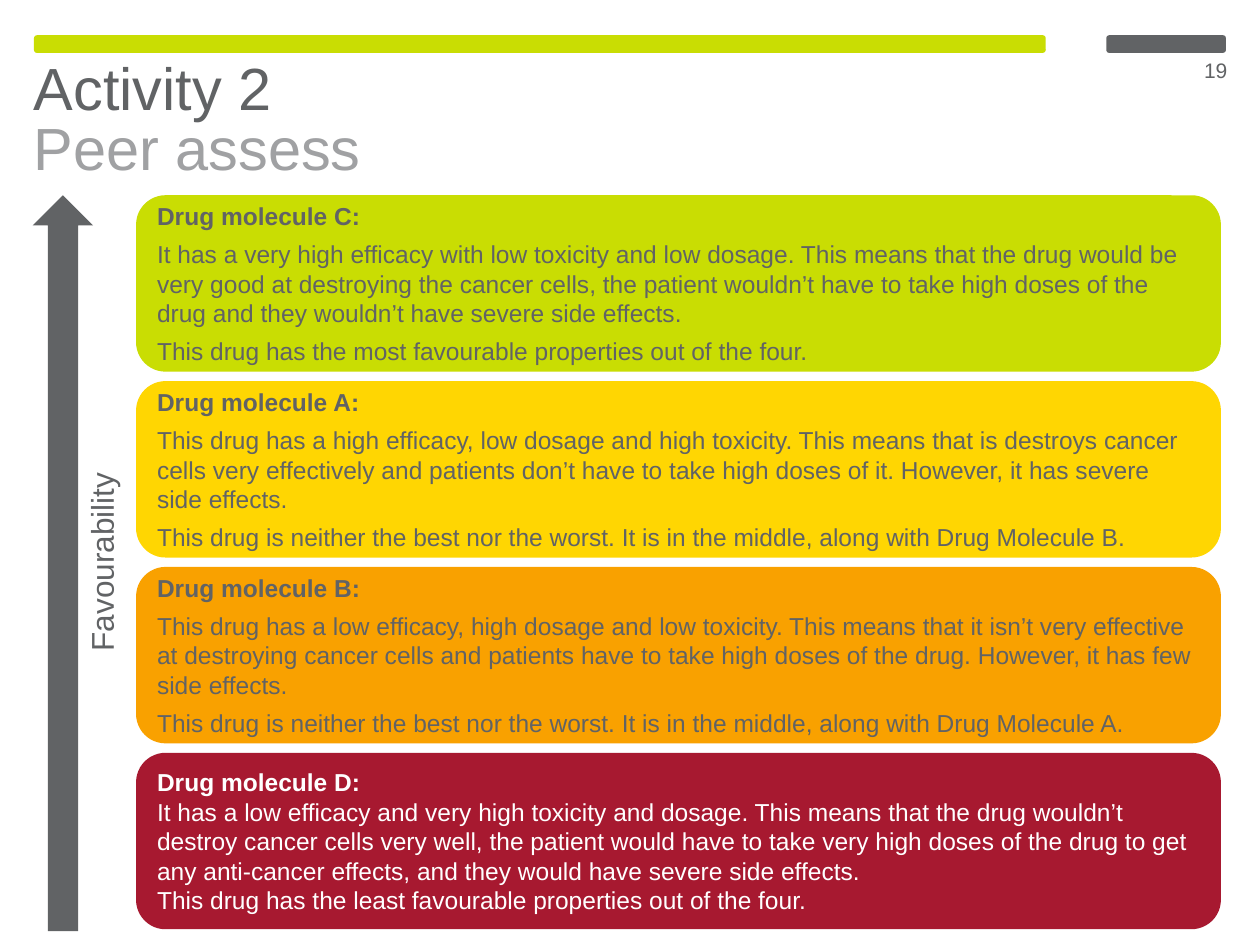
"""Build the drug molecule peer assessment slide."""
from pptx import Presentation
from pptx.dml.color import RGBColor
from pptx.enum.shapes import MSO_SHAPE
from pptx.enum.text import MSO_ANCHOR, PP_ALIGN
from pptx.util import Inches, Pt

THEME = {
    "font": "Arial",
    "lime": "C9DD03", "yellow": "FFD602", "orange": "F9A100", "red": "A71930",
    "grey": "616365", "silver": "A0A1A3", "white": "FFFFFF",
    "title": 34, "label": 18, "body": 14, "number": 12,
}
TITLE = [("Activity 2", "grey", 5), ("Peer assess", "silver", 0)]
PAGE_NUMBER = "19"
AXIS_LABEL = "Favourability"
CARDS = [
    ("lime", "grey", 5, [
        "Drug molecule C:",
        "It has a very high efficacy with low toxicity and low dosage. This means that the drug would be very good at destroying the cancer cells, the patient wouldn’t have to take high doses of the drug and they wouldn’t have severe side effects.",
        "This drug has the most favourable properties out of the four."]),
    ("yellow", "grey", 5, [
        "Drug molecule A:",
        "This drug has a high efficacy, low dosage and high toxicity. This means that is destroys cancer cells very effectively and patients don’t have to take high doses of it. However, it has severe side effects.",
        "This drug is neither the best nor the worst. It is in the middle, along with Drug Molecule B."]),
    ("orange", "grey", 5, [
        "Drug molecule B:",
        "This drug has a low efficacy, high dosage and low toxicity. This means that it isn’t very effective at destroying cancer cells and patients have to take high doses of the drug. However, it has few side effects.",
        "This drug is neither the best nor the worst. It is in the middle, along with Drug Molecule A."]),
    ("red", "white", 0, [
        "Drug molecule D:",
        "It has a low efficacy and very high toxicity and dosage. This means that the drug wouldn’t destroy cancer cells very well, the patient would have to take very high doses of the drug to get any anti-cancer effects, and they would have severe side effects.",
        "This drug has the least favourable properties out of the four."]),
]
BARS = [(0.27, 8.03, "lime"), (8.78, 0.95, "grey")]
CARD_TOP, CARD_STEP = 1.55, 1.475


def set_values(target, values):
    """Set each named attribute on the target."""
    for name, value in values.items():
        setattr(target, name, value)


def add_block(page, kind, place, fill):
    """Add a filled preset shape without line or shadow."""
    shape = page.shapes.add_shape(kind, *map(Inches, place))
    shape.shadow.inherit = False
    shape.fill.solid()
    shape.fill.fore_color.rgb = RGBColor.from_string(THEME[fill])
    shape.line.fill.background()
    return shape


def add_box(page, place):
    """Add an empty text box."""
    return page.shapes.add_textbox(*map(Inches, place))


def write(shape, lines, size, anchor=MSO_ANCHOR.TOP, align=PP_ALIGN.LEFT, spacing=1.0):
    """Write (text, colour, space before, bold) lines into a shape."""
    frame = shape.text_frame
    set_values(frame, {"word_wrap": True, "vertical_anchor": anchor})
    for index, (text, colour, before, bold) in enumerate(lines):
        para = frame.add_paragraph() if index else frame.paragraphs[0]
        set_values(para, {"alignment": align, "line_spacing": spacing,
                          "space_before": Pt(before), "space_after": Pt(0)})
        span = para.add_run()
        span.text = text
        set_values(span.font, {"name": THEME["font"], "size": Pt(THEME[size]), "bold": bold})
        span.font.color.rgb = RGBColor.from_string(THEME[colour])


def main():
    """Lay out the slide and save it."""
    deck = Presentation()
    set_values(deck, {"slide_width": Inches(10), "slide_height": Inches(7.5)})
    page = deck.slides.add_slide(deck.slide_layouts[6])

    for left, width, fill in BARS:
        add_block(page, MSO_SHAPE.ROUNDED_RECTANGLE, (left, 0.28, width, 0.14), fill)
    write(add_box(page, (0.17, 0.44, 8.15, 1.39)),
          [(*line, False) for line in TITLE], "title", spacing=0.85)
    write(add_box(page, (8.78, 0.41, 1.06, 0.35)),
          [(PAGE_NUMBER, "grey", 0, False)], "number", align=PP_ALIGN.RIGHT)

    for row, (fill, colour, before, texts) in enumerate(CARDS):
        card = add_block(page, MSO_SHAPE.ROUNDED_RECTANGLE,
                         (1.08, CARD_TOP + row * CARD_STEP, 8.61, 1.4), fill)
        lines = [(text, colour, before, index == 0) for index, text in enumerate(texts)]
        write(card, lines, "body", anchor=MSO_ANCHOR.MIDDLE)

    add_block(page, MSO_SHAPE.UP_ARROW, (0.26, CARD_TOP, 0.48, 5.84), "grey")
    label = add_box(page, (-2.11, 4.26, 5.83, 0.4))
    label.rotation = 270
    write(label, [(AXIS_LABEL, "grey", 0, False)], "label", align=PP_ALIGN.CENTER)
    deck.save("out.pptx")


if __name__ == "__main__":
    main()
